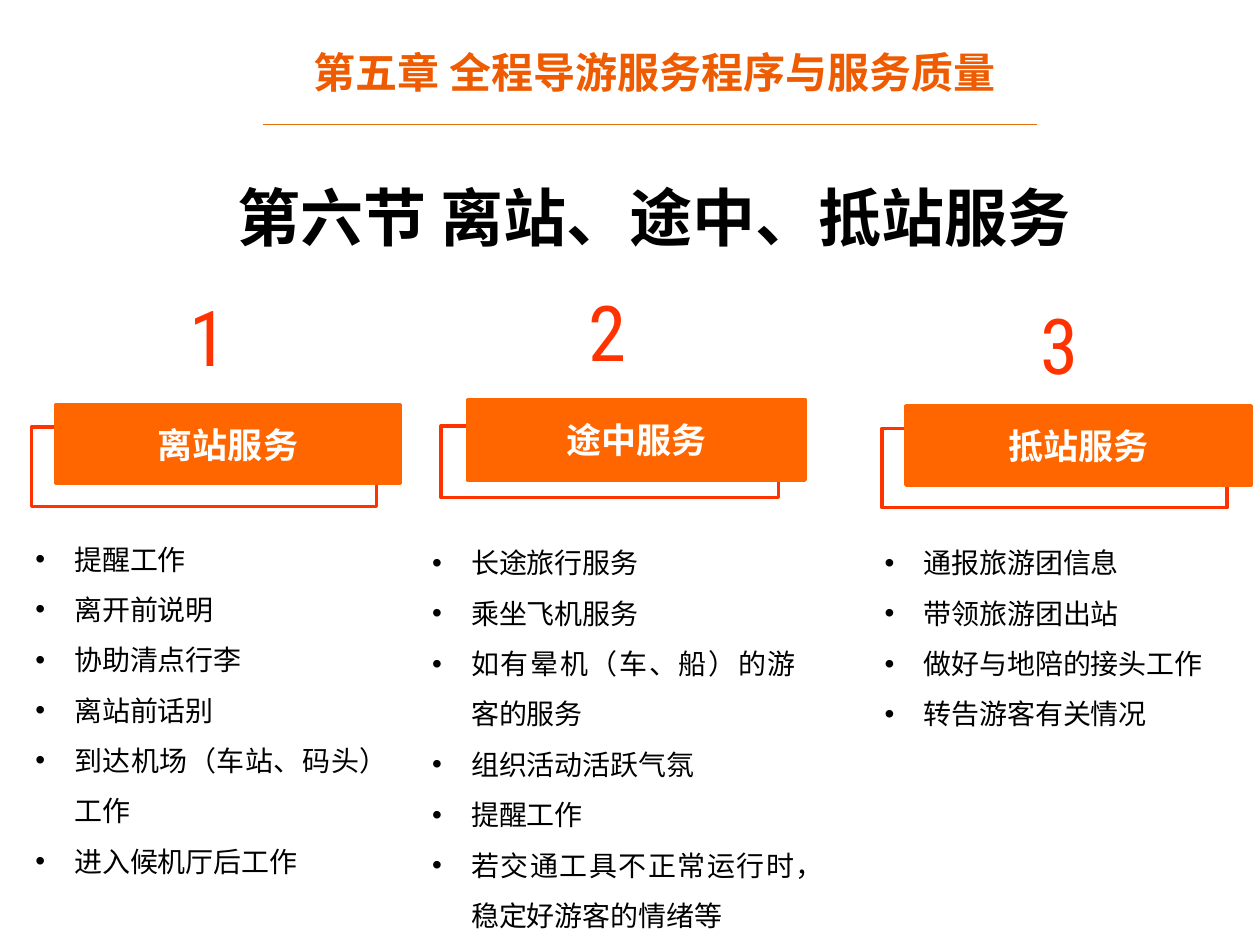
"""Build the slide on departure, en-route and arrival services."""
import pptx
import pptx.util
import pptx.dml.color
import pptx.enum.shapes
import pptx.enum.text
import pptx.oxml.ns
import lxml.etree

PX = 9144
ORANGE, RED, WHITE, BLACK = "FF6600", "FF3300", "FFFFFF", "000000"
ALIGN = pptx.enum.text.PP_ALIGN
ANCHOR = pptx.enum.text.MSO_ANCHOR
RECT = pptx.enum.shapes.MSO_SHAPE.RECTANGLE
qn = pptx.oxml.ns.qn


def rgb(value):
    return pptx.dml.color.RGBColor.from_string(value)


def write(sp, text, size, color, font="Calibri", bold=False, align=ALIGN.CENTER, anchor=ANCHOR.TOP):
    tf = sp.text_frame
    tf.text = text
    tf.word_wrap = True
    tf.auto_size = pptx.enum.text.MSO_AUTO_SIZE.NONE
    tf.vertical_anchor = anchor
    for p in tf.paragraphs:
        p.alignment = align
        p.space_before = pptx.util.Pt(0)
        for r in p.runs:
            r.font.size = pptx.util.Pt(size)
            r.font.bold = bold
            r.font.name = font
            r.font.color.rgb = rgb(color)
            ea = lxml.etree.Element(qn("a:ea"), typeface=font)
            r.font._element.find(qn("a:latin")).addnext(ea)


prs = pptx.Presentation()
prs.slide_width, prs.slide_height = 1000 * PX, 750 * PX
s = prs.slides.add_slide(prs.slide_layouts[4])
holders = {sp.placeholder_format.idx: sp for sp in s.placeholders}

headings = [
    (1, (228, 32, 583, 50), "第五章 全程导游服务程序与服务质量", 24, "EE5B00", "Calibri"),
    (0, (141, 137, 756, 71), "第六节 离站、途中、抵站服务", 36, BLACK, "Noto Sans CJK SC"),
]
for idx, box, text, size, color, font in headings:
    sp = holders[idx]
    sp.left, sp.top, sp.width, sp.height = [v * PX for v in box]
    write(sp, text, size, color, font, bold=True)
    for p in sp.text_frame.paragraphs:
        p.line_spacing = 1.0

rule = s.shapes.add_connector(
    pptx.enum.shapes.MSO_CONNECTOR.STRAIGHT, 209 * PX, 99 * PX, 823 * PX, 99 * PX)
rule.line.color.rgb = rgb("E46C0A")
rule.line.width = pptx.util.Pt(0.75)
lxml.etree.SubElement(rule._element.spPr, qn("a:effectLst"))

columns = [
    ("1", (141, 225, 80, 82), "离站服务", (25, 339, 274, 63), (44, 321, 274, 63),
     2, (18, 412, 300, 293),
     ["提醒工作", "离开前说明", "协助清点行李", "离站前话别",
      "到达机场（车站、码头）工作", "进入候机厅后工作"]),
    ("2", (457, 221, 79, 84), "途中服务", (350, 338, 268, 57), (371, 317, 268, 64),
     3, (333, 415, 309, 329),
     ["长途旅行服务", "乘坐飞机服务", "如有晕机（车、船）的游客的服务",
      "组织活动活跃气氛", "提醒工作", "若交通工具不正常运行时，稳定好游客的情绪等"]),
    ("3", (816, 231, 80, 84), "抵站服务", (700, 340, 274, 63), (719, 322, 274, 63),
     4, (692, 415, 300, 167),
     ["通报旅游团信息", "带领旅游团出站", "做好与地陪的接头工作", "转告游客有关情况"]),
]
for number, number_box, label, frame_box, label_box, idx, list_box, items in columns:
    for box, fill, line in [(frame_box, None, RED), (label_box, ORANGE, ORANGE)]:
        sp = s.shapes.add_shape(RECT, *[v * PX for v in box])
        sp.shadow.inherit = False
        sp.line.color.rgb = rgb(line)
        sp.line.width = pptx.util.Pt(2)
        if fill:
            sp.fill.solid()
            sp.fill.fore_color.rgb = rgb(fill)
            write(sp, label, 20, WHITE, bold=True, anchor=ANCHOR.MIDDLE)
        else:
            sp.fill.background()

    sp = s.shapes.add_textbox(*[v * PX for v in number_box])
    write(sp, number, 44, RED, "Roboto Condensed", align=ALIGN.LEFT)

    sp = holders[idx]
    sp.left, sp.top, sp.width, sp.height = [v * PX for v in list_box]
    write(sp, "\n".join(items), 16, BLACK, align=ALIGN.JUSTIFY)
    for p in sp.text_frame.paragraphs:
        p.line_spacing = 1.5
        pPr = p._p.get_or_add_pPr()
        pPr.set("marL", str(31 * PX))
        pPr.set("indent", str(-31 * PX))
        lxml.etree.SubElement(pPr, qn("a:buFont"), typeface="Arial")
        lxml.etree.SubElement(pPr, qn("a:buChar"), char="•")

prs.save("out.pptx")
